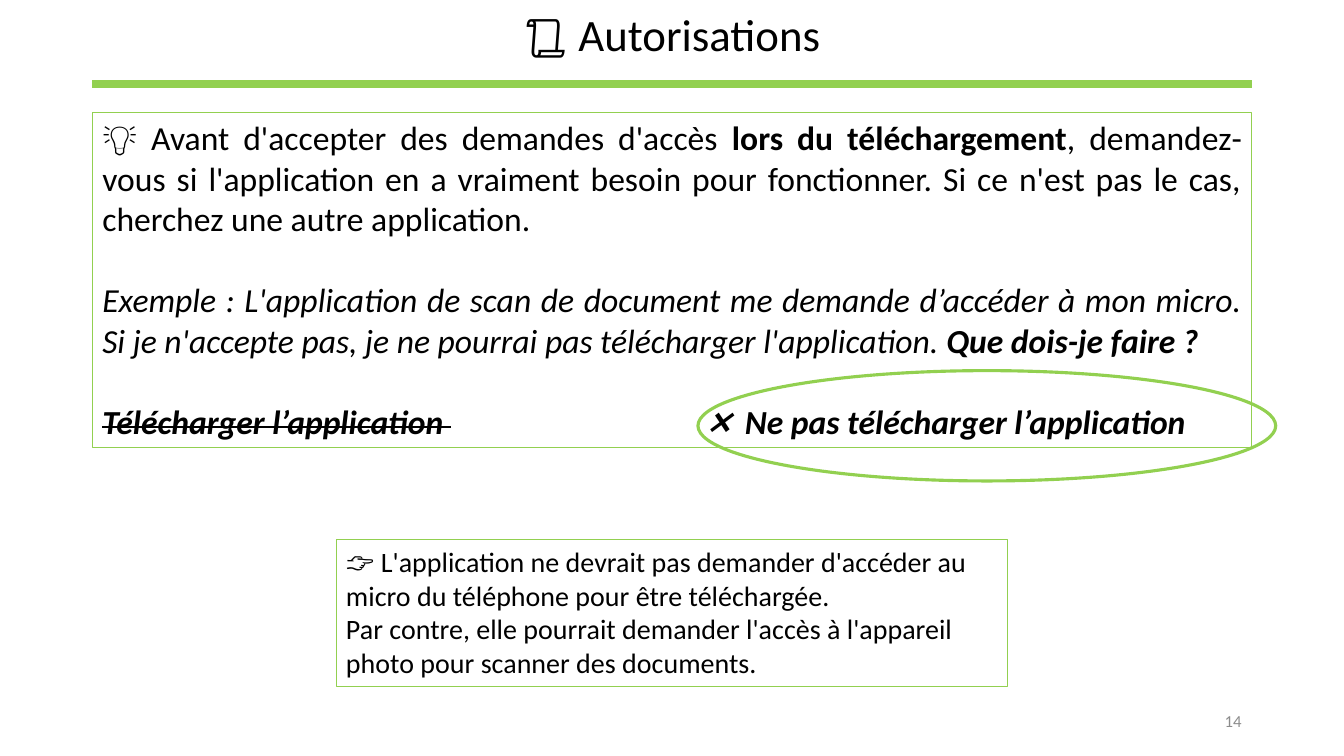
from lxml.etree import SubElement
from pptx import Presentation
from pptx.dml.color import RGBColor
from pptx.enum.shapes import MSO_CONNECTOR as Connector, MSO_SHAPE as Shape
from pptx.enum.text import MSO_ANCHOR as Anchor, MSO_AUTO_SIZE as AutoSize, PP_ALIGN as Align
from pptx.oxml.ns import qn
from pptx.util import Cm, Pt

GREEN = RGBColor(0x92, 0xD0, 0x50)
BLACK = RGBColor(0, 0, 0)
GREY = RGBColor(0x8C, 0x8C, 0x8C)
FONT = "Calibri"
TITLE_ONLY = 5
LEFT, WIDTH = 2.33, 29.21


def add_run(paragraph, text, size=24, color=BLACK, bold=False, italic=False, strike=False):
    run = paragraph.add_run()
    run.text = text
    font = run.font
    font.name, font.size, font.bold, font.italic = FONT, Pt(size), bold, italic
    font.color.rgb = color
    if strike:
        run._r.get_or_add_rPr().set("strike", "sngStrike")


def add_tab_stop(paragraph, position):
    tabs = SubElement(paragraph._p.get_or_add_pPr(), qn("a:tabLst"))
    SubElement(tabs, qn("a:tab"), pos=str(position), algn="l")


def write_paragraphs(frame, paragraphs, align=Align.LEFT, gap=0, **text_format):
    """Fill the frame; each paragraph is a list of (text, format) runs."""
    frame.word_wrap = True
    for index, runs in enumerate(paragraphs):
        paragraph = frame.add_paragraph() if index else frame.paragraphs[0]
        paragraph.alignment = align
        if index:
            paragraph.space_before = Pt(gap)
        for text, run_format in runs:
            add_run(paragraph, text, **{**text_format, **run_format})


def add_framed_text(slide, box, paragraphs, **text_format):
    framed = slide.shapes.add_textbox(*map(Cm, box))
    framed.line.color.rgb = GREEN
    framed.line.width = Pt(0.75)
    write_paragraphs(framed.text_frame, paragraphs, **text_format)
    framed.text_frame.auto_size = AutoSize.SHAPE_TO_FIT_TEXT
    return framed.text_frame


def add_heading(slide, left, top, width, height):
    title = slide.shapes.title
    title.left, title.top, title.width, title.height = map(Cm, (left, top, width, height))
    title.text_frame.vertical_anchor = Anchor.MIDDLE
    write_paragraphs(title.text_frame, [[("📜 Autorisations", {})]], align=Align.CENTER, size=32)
    title.text_frame.paragraphs[0].line_spacing = 0.9

    rule_y = Cm(top + height - 0.66)
    rule = slide.shapes.add_connector(Connector.STRAIGHT, Cm(left), rule_y, Cm(left + width), rule_y)
    rule.line.color.rgb = GREEN
    rule.line.width = Pt(6)
    SubElement(rule._element.spPr, qn("a:effectLst"))


def add_question(slide, left, top, width, height):
    advice = [
        ("💡 ", {"bold": True}),
        ("Avant d'accepter des demandes d'accès ", {}),
        ("lors du téléchargement", {"bold": True}),
        (", demandez-vous si l'application en a vraiment besoin pour fonctionner. "
         "Si ce n'est pas le cas, cherchez une autre application.", {}),
    ]
    example = [
        ("Exemple : L'application de scan de document me demande d’accéder à mon micro. "
         "Si je n'accepte pas, je ne pourrai pas télécharger l'application. ", {"italic": True}),
        ("Que dois-je faire ? ", {"italic": True, "bold": True}),
    ]
    answers = [
        ("Télécharger l’application ", {"italic": True, "bold": True, "strike": True}),
        ("\t❌  Ne pas télécharger l’application ", {"italic": True, "bold": True}),
    ]
    frame = add_framed_text(slide, (left, top, width, height), [advice, example, answers],
                            align=Align.JUSTIFY, gap=29.3)
    add_tab_stop(frame.paragraphs[-1], Cm(15.24))


def add_explanation(slide, left, top, width, height):
    sentences = [
        "👉 L'application ne devrait pas demander d'accéder au micro du téléphone "
        "pour être téléchargée.",
        "Par contre, elle pourrait demander l'accès à l'appareil photo "
        "pour scanner des documents.",
    ]
    add_framed_text(slide, (left, top, width, height),
                    [[(sentence, {})] for sentence in sentences], size=20)


def circle_right_answer(slide, left, top, width, height):
    ring = slide.shapes.add_shape(Shape.OVAL, *map(Cm, (left, top, width, height)))
    ring.shadow.inherit = False
    ring.fill.background()
    ring.line.color.rgb = GREEN
    ring.line.width = Pt(2.25)


def add_page_number(slide, left, top, width, height):
    number = slide.shapes.add_textbox(*map(Cm, (left, top, width, height)))
    number.text_frame.vertical_anchor = Anchor.MIDDLE
    write_paragraphs(number.text_frame, [[("14", {})]], align=Align.RIGHT, size=12, color=GREY)


def main():
    deck = Presentation()
    deck.slide_width, deck.slide_height = Cm(33.87), Cm(19.05)
    slide = deck.slides.add_slide(deck.slide_layouts[TITLE_ONLY])
    add_heading(slide, LEFT, -0.91, WIDTH, 3.69)
    add_page_number(slide, LEFT + WIDTH - 7.62, 17.65, 7.62, 1.02)
    add_question(slide, LEFT, 2.83, WIDTH, 8.46)
    add_explanation(slide, 8.47, 13.6, 16.93, 3.69)
    circle_right_answer(slide, 17.59, 9.34, 14.56, 2.78)
    deck.save("out.pptx")


if __name__ == "__main__":
    main()
